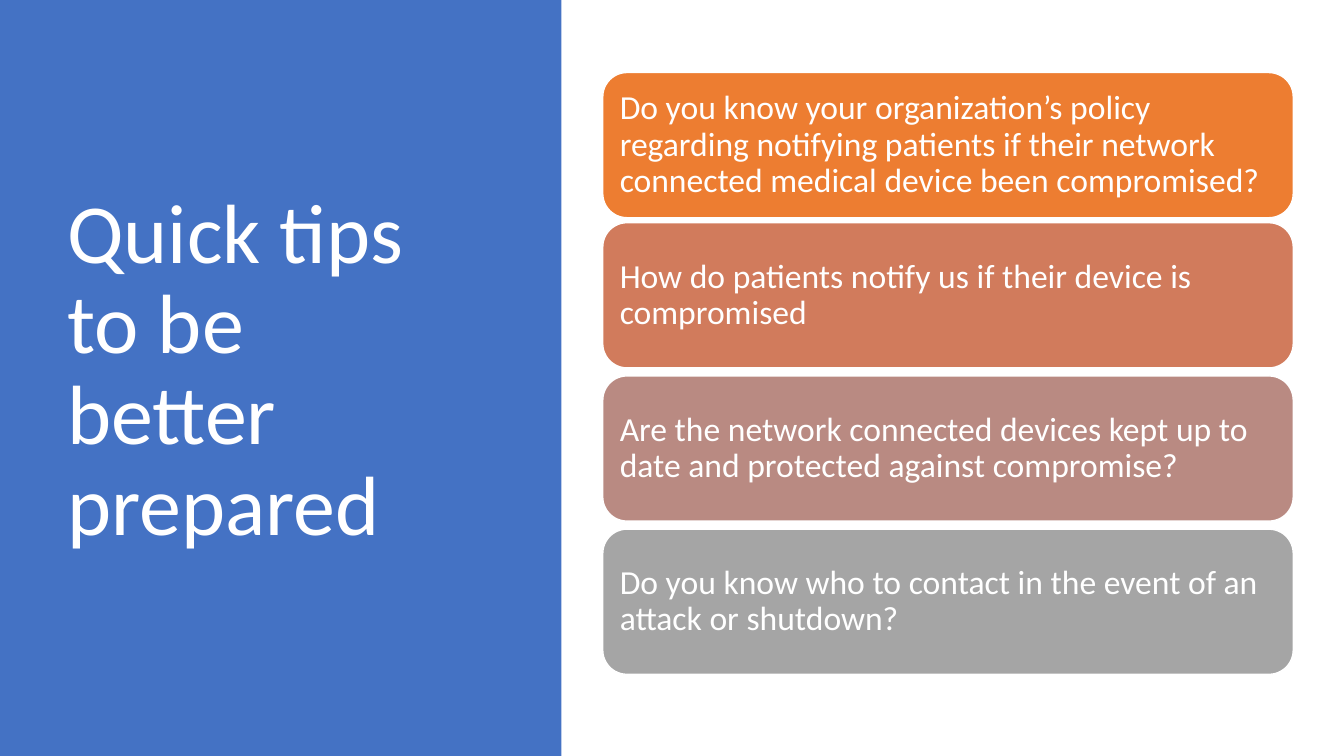
from pptx import Presentation
from pptx.dml.color import RGBColor
from pptx.enum.shapes import MSO_SHAPE
from pptx.enum.text import MSO_ANCHOR, PP_ALIGN
from pptx.util import Pt

# Content
TITLE = "Quick tips to be better prepared"
# Each tip: text, fill colour, top in points
TIPS = [
    ("Do you know your organization’s policy regarding notifying patients "
     "if their network connected medical device been compromised?", "ED7D31", 51.84),
    ("How do patients notify us if their device is compromised", "D17B5C", 159.12),
    ("Are the network connected devices kept up to date and protected "
     "against compromise?", "B98A82", 268.56),
    ("Do you know who to contact in the event of an attack or shutdown?", "A5A5A5", 378),
]

# Theme
THEME = {"font": "Calibri", "panel": "4472C4", "light": "FFFFFF",
         "title_size": 60, "tip_size": 24}

# Layout, in points
SLIDE_WIDTH, SLIDE_HEIGHT = 960, 540
PANEL_WIDTH = 401
TITLE_BOX = (41.04, 48.96, 299.52, 433.44)
TIP_LEFT, TIP_WIDTH, TIP_HEIGHT = 430.56, 493.2, 103.68
INSET = 7.2


def add_box(slide, kind, box, fill, line=None):
    shape = slide.shapes.add_shape(kind, *map(Pt, box))
    shape.shadow.inherit = False
    shape.fill.solid()
    shape.fill.fore_color.rgb = RGBColor.from_string(fill)
    if line:
        shape.line.color.rgb = RGBColor.from_string(line)
        shape.line.width = Pt(1)
    else:
        shape.line.fill.background()
    return shape


def write_text(shape, text, *, size, inset_y=INSET):
    frame = shape.text_frame
    frame.word_wrap = True
    frame.vertical_anchor = MSO_ANCHOR.MIDDLE
    frame.margin_left = frame.margin_right = Pt(INSET)
    frame.margin_top = frame.margin_bottom = Pt(inset_y)
    paragraph = frame.paragraphs[0]
    paragraph.text = text
    paragraph.alignment = PP_ALIGN.LEFT
    paragraph.line_spacing = 0.9
    paragraph.font.name = THEME["font"]
    paragraph.font.size = Pt(size)
    paragraph.font.color.rgb = RGBColor.from_string(THEME["light"])


def main():
    presentation = Presentation()
    presentation.slide_width = Pt(SLIDE_WIDTH)
    presentation.slide_height = Pt(SLIDE_HEIGHT)
    slide = presentation.slides.add_slide(presentation.slide_layouts[6])

    # Title panel
    add_box(slide, MSO_SHAPE.RECTANGLE, (0, 0, PANEL_WIDTH, SLIDE_HEIGHT), THEME["panel"])
    title = slide.shapes.add_textbox(*map(Pt, TITLE_BOX))
    write_text(title, TITLE, size=THEME["title_size"], inset_y=3.6)

    # Tip cards
    for text, fill, top in TIPS:
        card = add_box(slide, MSO_SHAPE.ROUNDED_RECTANGLE,
                       (TIP_LEFT, top, TIP_WIDTH, TIP_HEIGHT), fill, line=THEME["light"])
        write_text(card, text, size=THEME["tip_size"])

    presentation.save("out.pptx")


if __name__ == "__main__":
    main()
